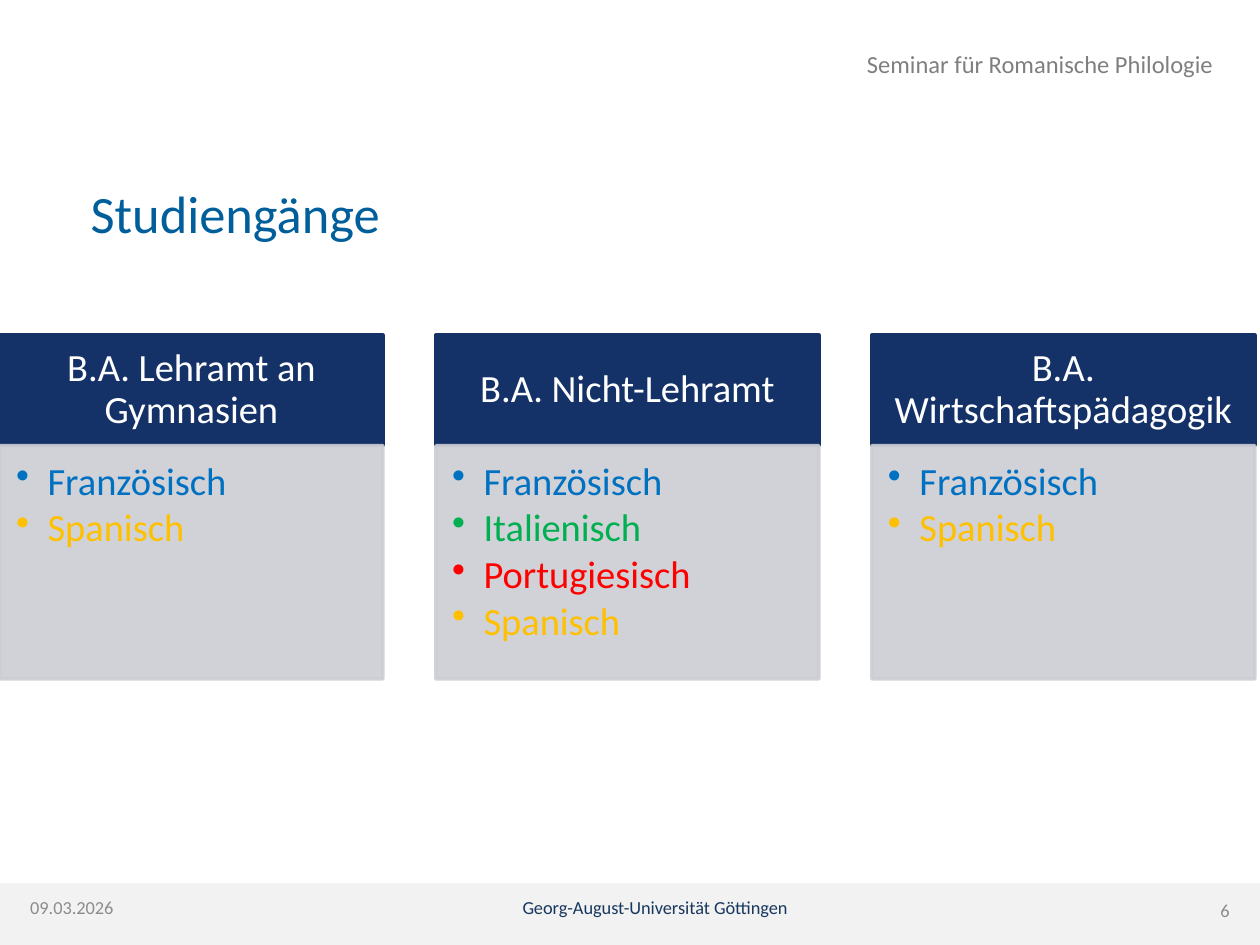
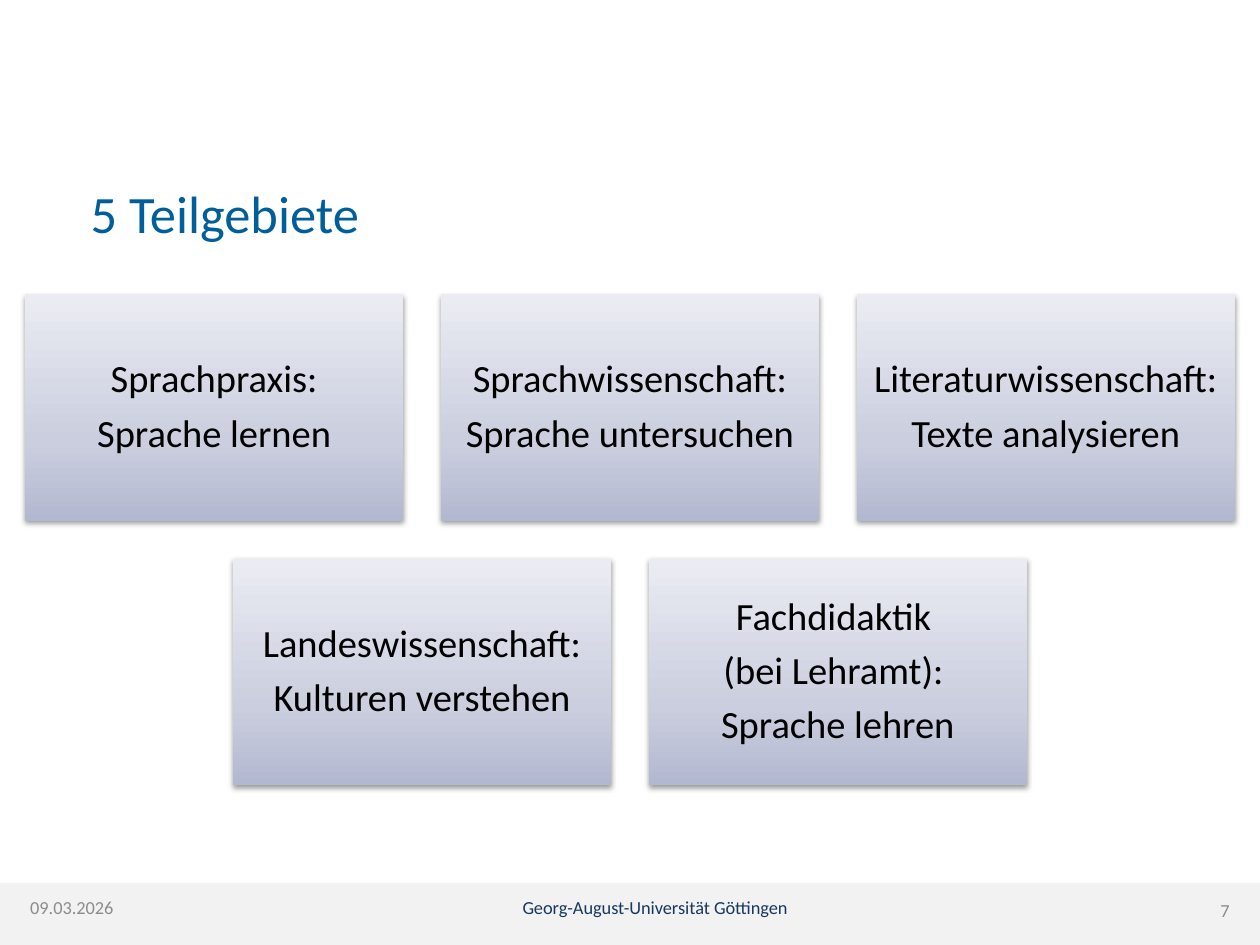
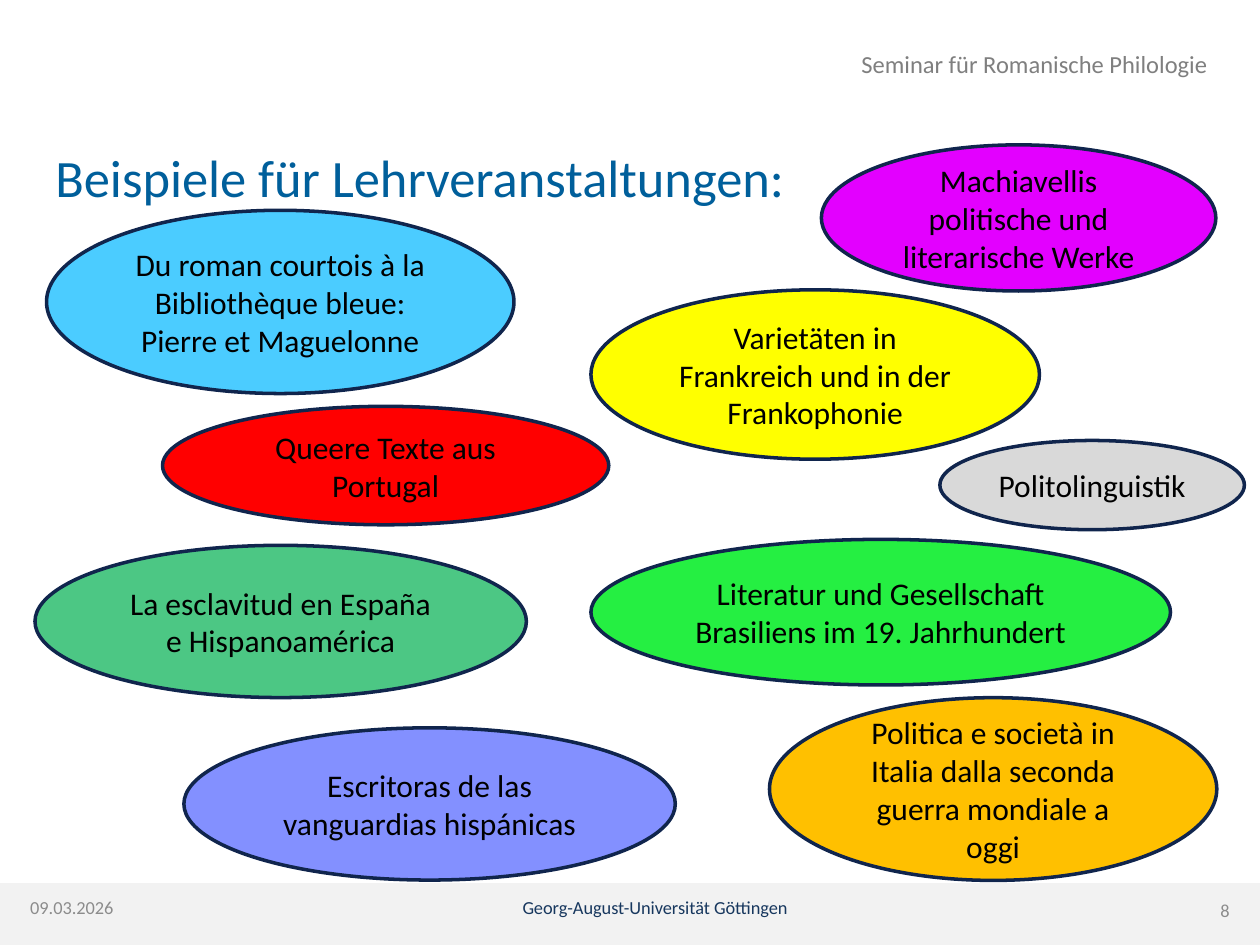
from dataclasses import dataclass, replace
from typing import Optional

import lxml.etree
import pptx
import pptx.dml.color
import pptx.enum.shapes
import pptx.enum.text
import pptx.oxml.ns
import pptx.util

Pt = pptx.util.Pt
Align = pptx.enum.text.PP_ALIGN
Anchor = pptx.enum.text.MSO_ANCHOR
Shape = pptx.enum.shapes.MSO_SHAPE
qn = pptx.oxml.ns.qn

SLIDE_WIDTH, SLIDE_HEIGHT = 720, 540
FONT = "Calibri"
NAVY, OUTLINE, TITLE_BLUE = "153268", "10254D", "005F9B"
BAND_GREY, PANEL_GREY = "F2F2F2", "CCCED4"
FOOTER_BLUE, FOOTER_GREY, HEADER_GREY = "17375E", "8C8C8C", "7F7F7F"
BLACK, WHITE = "000000", "FFFFFF"
CARD_GRADIENT = ((0, "B3B8D1"), (35, "CACEDE"), (100, "EBECF3"))
LANGUAGE_COLOURS = {
    "Französisch": "0070C0",
    "Italienisch": "00B050",
    "Portugiesisch": "FF0000",
    "Spanisch": "FFC000",
}


@dataclass(frozen=True)
class Frame:
    left: float
    top: float
    width: float
    height: float


@dataclass(frozen=True)
class TextStyle:
    size: float
    colour: str
    align: Align = Align.LEFT
    anchor: Anchor = Anchor.TOP
    insets: tuple[float, float, float, float] = (0, 0, 0, 0)
    line_spacing: float = 1
    space_after: float = 0
    bulleted: bool = False


@dataclass(frozen=True)
class Look:
    fill: str
    line: Optional[str] = None
    opacity: int = 100
    line_opacity: int = 100


@dataclass(frozen=True)
class Programme:
    name: str
    languages: tuple[str, ...]


@dataclass(frozen=True)
class Course:
    name: str
    frame: Frame
    fill: str
    opacity: int = 100


TITLE = TextStyle(30, TITLE_BLUE)
HEADER = TextStyle(14, HEADER_GREY, Align.RIGHT)
DATE = TextStyle(10.5, FOOTER_GREY)
PAGE_NUMBER = replace(DATE, align=Align.RIGHT)
UNIVERSITY = TextStyle(10.5, FOOTER_BLUE, Align.CENTER)
PROGRAMME_NAME = TextStyle(22, WHITE, Align.CENTER, Anchor.MIDDLE, (12.3, 7, 12.3, 7), 0.9, 7.3)
LANGUAGE = TextStyle(22, BLACK, insets=(9.24, 9.24, 12.3, 13.9), line_spacing=0.9,
                     space_after=3, bulleted=True)
CARD = TextStyle(22, BLACK, Align.CENTER, Anchor.MIDDLE, (6.6, 6.6, 6.6, 6.6), 0.9, 7.3)
COURSE = TextStyle(18, BLACK, Align.CENTER, Anchor.MIDDLE, (7.2, 3.6, 7.2, 3.6))

PROGRAMMES = (
    Programme("B.A. Lehramt an Gymnasien", ("Französisch", "Spanisch")),
    Programme("B.A. Nicht-Lehramt", tuple(LANGUAGE_COLOURS)),
    Programme("B.A. Wirtschaftspädagogik", ("Französisch", "Spanisch")),
)
FIELD_ROWS = (
    (
        ("Sprachpraxis:", "Sprache lernen"),
        ("Sprachwissenschaft:", "Sprache untersuchen"),
        ("Literaturwissenschaft:", "Texte analysieren"),
    ),
    (
        ("Landeswissenschaft:", "Kulturen verstehen"),
        ("Fachdidaktik ", "(bei Lehramt): ", "Sprache lehren"),
    ),
)
COURSES = (
    Course("Machiavellis politische und literarische Werke",
           Frame(469.4, 82.8, 225.4, 83.5), "E300FF"),
    Course("Varietäten in Frankreich und in der Frankophonie",
           Frame(337.7, 165.6, 256.3, 96.8), "FFFF00"),
    Course("Du roman courtois à la Bibliothèque bleue: Pierre et Maguelonne",
           Frame(26.6, 120.2, 267.1, 104.7), "4BCCFF"),
    Course("Literatur und Gesellschaft Brasiliens im 19. Jahrhundert",
           Frame(337.7, 308.2, 331.2, 83.2), "25EF42"),
    Course("Politolinguistik", Frame(537.1, 251.7, 174, 51), "D9D9D9"),
    Course("Queere Texte aus Portugal", Frame(92.9, 232.2, 255, 67.7), "FF0000"),
    Course("La esclavitud en España e Hispanoamérica",
           Frame(20, 311.6, 280.8, 87), "00B050", 70),
    Course("Politica e società in Italia dalla seconda guerra mondiale a oggi",
           Frame(439.7, 398.7, 255.6, 104.4), "FFC000"),
    Course("Escritoras de las vanguardias hispánicas",
           Frame(105.1, 415.9, 280.8, 87), "8390FF"),
)


def rgb(colour: str) -> pptx.dml.color.RGBColor:
    return pptx.dml.color.RGBColor.from_string(colour)


def add_colour(parent, colour: str, opacity: int = 100) -> None:
    element = lxml.etree.SubElement(parent, qn("a:srgbClr"), val=colour)
    if opacity < 100:
        lxml.etree.SubElement(element, qn("a:alpha"), val=str(opacity * 1000))


def paint(fill, colour: str, opacity: int = 100) -> None:
    fill.solid()
    fill.fore_color.rgb = rgb(colour)
    if opacity < 100:
        element = fill._xPr.find(qn("a:solidFill"))
        element.clear()
        add_colour(element, colour, opacity)


def write(shape, lines: tuple[str, ...], style: TextStyle) -> None:
    frame = shape.text_frame
    frame.word_wrap = True
    frame.vertical_anchor = style.anchor
    (frame.margin_left, frame.margin_top,
     frame.margin_right, frame.margin_bottom) = map(Pt, style.insets)
    for index, line in enumerate(lines):
        para = frame.paragraphs[0] if index == 0 else frame.add_paragraph()
        para.text = line
        para.alignment = style.align
        para.line_spacing = style.line_spacing
        para.space_after = Pt(style.space_after)
        if style.bulleted:
            properties = para._p.get_or_add_pPr()
            properties.set("marL", str(Pt(18)))
            properties.set("indent", str(-Pt(18)))
            lxml.etree.SubElement(properties, qn("a:buChar"), char="•")
        para.font.name = FONT
        para.font.size = Pt(style.size)
        para.font.color.rgb = rgb(LANGUAGE_COLOURS.get(line, style.colour))


def add_text(page, frame: Frame, text: str, style: TextStyle) -> None:
    box = page.shapes.add_textbox(Pt(frame.left), Pt(frame.top), Pt(frame.width), Pt(frame.height))
    write(box, (text,), style)


def add_shape(page, kind: Shape, frame: Frame, look: Look):
    shape = page.shapes.add_shape(kind, Pt(frame.left), Pt(frame.top),
                                  Pt(frame.width), Pt(frame.height))
    shape.shadow.inherit = False
    paint(shape.fill, look.fill, look.opacity)
    if look.line:
        paint(shape.line.fill, look.line, look.line_opacity)
        shape.line.width = Pt(2)
    else:
        shape.line.fill.background()
    return shape


def add_card(page, frame: Frame, lines: tuple[str, ...]) -> None:
    card = add_shape(page, Shape.RECTANGLE, frame, Look(CARD_GRADIENT[0][1]))
    card.fill.gradient()
    card.fill.gradient_angle = 90
    properties = card._element.spPr
    stops = properties.find(".//" + qn("a:gsLst"))
    stops.clear()
    for position, colour in CARD_GRADIENT:
        stop = lxml.etree.SubElement(stops, qn("a:gs"), pos=str(position * 1000))
        add_colour(stop, colour)
    shadow = lxml.etree.SubElement(
        properties.find(qn("a:effectLst")), qn("a:outerShdw"), blurRad=str(Pt(3.15)),
        dist=str(Pt(1.57)), dir="5400000", rotWithShape="0")
    add_colour(shadow, BLACK, 38)
    write(card, lines, CARD)


def add_page(deck, number: int, title: str, title_left: float = 51.8, title_top: float = 103.7,
             header: str = ""):
    page = deck.slides.add_slide(deck.slide_layouts[6])
    add_shape(page, Shape.RECTANGLE, Frame(0, 504.7, SLIDE_WIDTH, 38.2), Look(BAND_GREY))
    add_text(page, Frame(136.1, 511.9, 476.6, 15), "Georg-August-Universität Göttingen", UNIVERSITY)
    add_text(page, Frame(17.3, 511.9, 81.4, 15), "09.03.2026", DATE)
    add_text(page, Frame(655.2, 514, 47.5, 14), str(number), PAGE_NUMBER)
    add_text(page, Frame(title_left, title_top, 600.5, 37.4), title, TITLE)
    if header:
        add_text(page, Frame(469.4, 28.1, 223.9, 17.3), header, HEADER)
    return page


def add_programmes(deck) -> None:
    page = add_page(deck, 6, "Studiengänge", header="Seminar für Romanische Philologie")
    for column, programme in enumerate(PROGRAMMES):
        name_frame = Frame(column * 249.1, 191.5, 218.9, 63)
        panel_frame = replace(name_frame, top=254.7, height=133.3)
        name = add_shape(page, Shape.RECTANGLE, name_frame, Look(NAVY, NAVY))
        write(name, (programme.name,), PROGRAMME_NAME)
        panel = add_shape(page, Shape.RECTANGLE, panel_frame,
                          Look(PANEL_GREY, PANEL_GREY, 90, 90))
        write(panel, programme.languages, LANGUAGE)


def add_fields(deck) -> None:
    page = add_page(deck, 7, "5 Teilgebiete")
    width, height, gap = 216, 129.6, 21.6
    for row, fields in enumerate(FIELD_ROWS):
        row_width = len(fields) * (width + gap) - gap
        for column, lines in enumerate(fields):
            left = (SLIDE_WIDTH - row_width) / 2 + column * (width + gap)
            add_card(page, Frame(left, 168 + row * (height + gap), width, height), lines)


def add_courses(deck) -> None:
    page = add_page(deck, 8, "Beispiele für Lehrveranstaltungen:", 31.7, 82.8,
                    "Seminar für Romanische Philologie ")
    for course in COURSES:
        oval = add_shape(page, Shape.OVAL, course.frame,
                         Look(course.fill, OUTLINE, course.opacity))
        write(oval, (course.name,), COURSE)


def main() -> None:
    deck = pptx.Presentation()
    deck.slide_width, deck.slide_height = Pt(SLIDE_WIDTH), Pt(SLIDE_HEIGHT)
    add_programmes(deck)
    add_fields(deck)
    add_courses(deck)
    deck.save("out.pptx")


if __name__ == "__main__":
    main()
